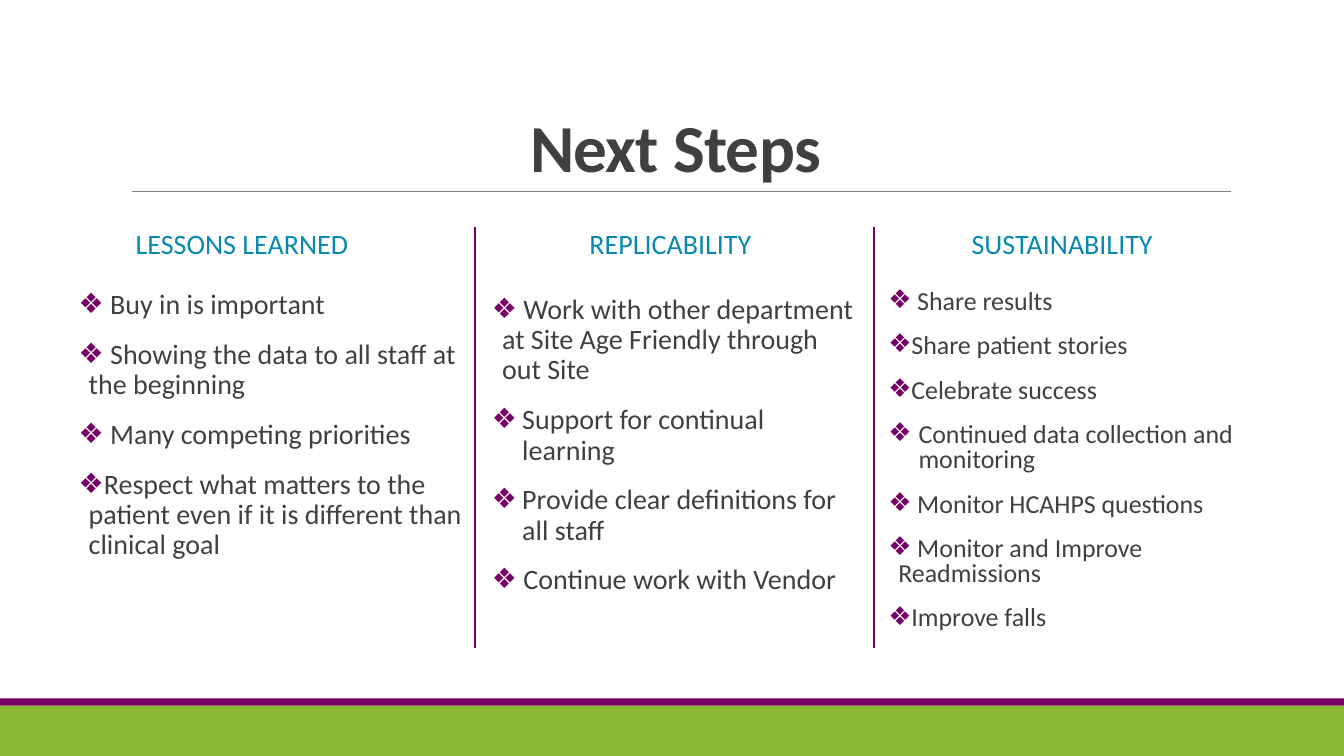
from lxml.etree import SubElement
from pptx import Presentation
from pptx.dml.color import RGBColor
from pptx.enum.shapes import MSO_CONNECTOR, MSO_SHAPE
from pptx.enum.text import MSO_ANCHOR, MSO_AUTO_SIZE, PP_ALIGN
from pptx.oxml.ns import qn
from pptx.util import Inches, Pt

PURPLE = "760065"
GREEN = "8AB833"
TEAL = "0989B1"
DARK = "404040"
GRAY = "808080"

LESSONS = [
    " Buy in is important",
    " Showing the data to all staff at the beginning",
    " Many competing priorities",
    "Respect what matters to the patient even if it is different than clinical goal",
]
REPLICABILITY = [
    " Work with other department at Site Age Friendly through out Site",
    "Support for continual\vlearning",
    "Provide clear definitions for\vall staff",
    " Continue work with Vendor",
]
SUSTAINABILITY = [
    " Share results",
    "Share patient stories",
    "Celebrate success",
    "Continued data collection and\vmonitoring",
    " Monitor HCAHPS questions",
    " Monitor and Improve Readmissions",
    "Improve falls",
]


def color(value):
    return RGBColor.from_string(value)


def apply(target, values):
    for name, value in values.items():
        setattr(target, name, value)


def place(shape, left, top, width, height):
    apply(shape, {"left": Inches(left), "top": Inches(top),
                  "width": Inches(width), "height": Inches(height)})


def add_band(slide, top, height, fill):
    band = slide.shapes.add_shape(
        MSO_SHAPE.RECTANGLE, 0, Inches(top), Inches(13.33), Inches(height))
    band.shadow.inherit = False
    band.fill.solid()
    band.fill.fore_color.rgb = color(fill)
    band.line.fill.background()


def add_rule(slide, start, end, line_color, width):
    rule = slide.shapes.add_connector(
        MSO_CONNECTOR.STRAIGHT, *map(Inches, start + end))
    rule.line.color.rgb = color(line_color)
    rule.line.width = Pt(width)
    SubElement(rule._element.spPr, qn("a:effectLst"))


def format_frame(shape, anchor, side_inset):
    apply(shape.text_frame, {
        "word_wrap": True, "auto_size": MSO_AUTO_SIZE.NONE,
        "vertical_anchor": anchor,
        "margin_left": Inches(side_inset), "margin_right": Inches(side_inset),
        "margin_top": Inches(0.05), "margin_bottom": Inches(0.05)})


def format_paragraph(paragraph, size, text_color, bold=False, **layout):
    apply(paragraph, layout)
    for run in paragraph.runs:
        apply(run.font, {"name": "Calibri", "size": Pt(size), "bold": bold})
        run.font.color.rgb = color(text_color)


def add_bullet(paragraph, indent):
    properties = paragraph._p.get_or_add_pPr()
    properties.set("marL", str(Inches(indent)))
    properties.set("indent", str(-Inches(indent)))
    bullet_color = SubElement(properties, qn("a:buClr"))
    SubElement(bullet_color, qn("a:srgbClr"), val=PURPLE)
    SubElement(properties, qn("a:buFont"), typeface="Calibri")
    SubElement(properties, qn("a:buChar"), char="❖")


def fill_title(title, text):
    place(title, 1.2, 0.31, 11, 1.59)
    format_frame(title, MSO_ANCHOR.BOTTOM, 0.1)
    title.text_frame.text = text
    paragraph = title.text_frame.paragraphs[0]
    format_paragraph(paragraph, 48, DARK, bold=True,
                     alignment=PP_ALIGN.CENTER, line_spacing=0.85)
    paragraph.runs[0].font._element.set("spc", "-50")


def fill_heading(shape, text, left, width):
    place(shape, left, 2.03, width, 0.81)
    format_frame(shape, MSO_ANCHOR.MIDDLE, 0.1)
    shape.text_frame.text = text
    format_paragraph(shape.text_frame.paragraphs[0], 20, TEAL,
                     alignment=PP_ALIGN.CENTER, line_spacing=0.9,
                     space_before=Pt(12), space_after=Pt(2))


def fill_list(shape, items, position, size, line_spacing):
    place(shape, *position)
    format_frame(shape, MSO_ANCHOR.TOP, 0)
    frame = shape.text_frame
    for number, item in enumerate(items):
        paragraph = frame.add_paragraph() if number else frame.paragraphs[0]
        paragraph.text = item
        format_paragraph(paragraph, size, DARK, alignment=PP_ALIGN.LEFT,
                         line_spacing=line_spacing,
                         space_before=Pt(12), space_after=Pt(2))
        add_bullet(paragraph, 0.3 if "\v" in item else 0.1)


def main():
    presentation = Presentation()
    presentation.slide_width = Inches(13.33)
    presentation.slide_height = Inches(7.5)
    slide = presentation.slides.add_slide(presentation.slide_layouts[4])

    add_band(slide, 7, 0.5, GREEN)
    add_band(slide, 6.93, 0.07, PURPLE)
    add_rule(slide, (1.31, 1.9), (12.21, 1.9), GRAY, 0.5)
    fill_title(slide.shapes.title, "Next Steps")

    left_heading, left_list, right_heading, right_list = list(slide.placeholders)[1:]
    middle_heading, middle_list = (
        slide.shapes.add_textbox(0, 0, 0, 0) for _ in range(2))

    fill_heading(left_heading, "LESSONS LEARNED", 0.97, 2.86)
    fill_heading(middle_heading, "REPLICABILITY", 5.22, 2.86)
    fill_heading(right_heading, "SUSTAINABILITY", 9.17, 2.73)
    fill_list(left_list, LESSONS, (0.78, 2.83, 3.81, 3.59), 20, 0.9)
    fill_list(middle_list, REPLICABILITY, (4.88, 2.88, 3.64, 3.59), 20, 0.9)
    fill_list(right_list, SUSTAINABILITY, (8.81, 2.83, 3.81, 3.59), 18.5, 0.8)

    for divider in (4.71, 8.67):
        add_rule(slide, (divider, 2.25), (divider, 6.43), PURPLE, 1)

    presentation.save("out.pptx")


if __name__ == "__main__":
    main()
